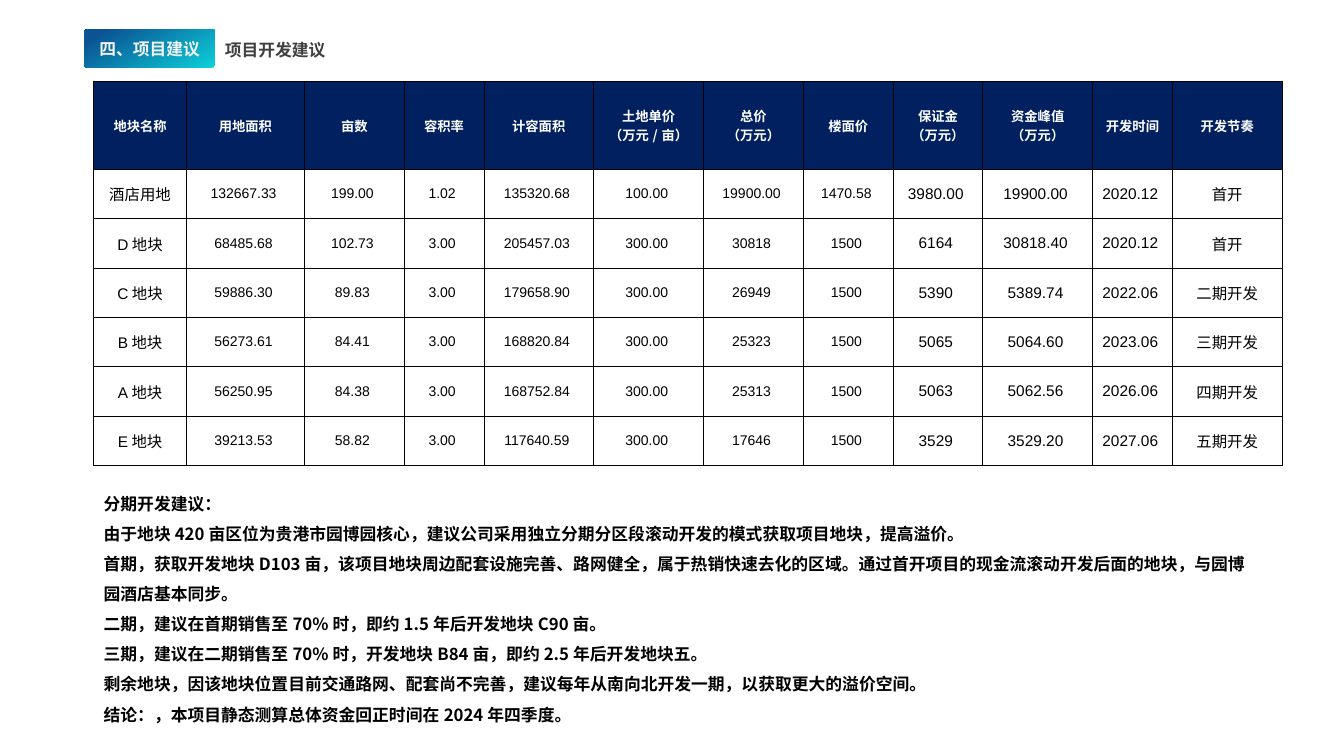
"""Build the project development proposal slide."""
import pptx
import pptx.dml.color
import pptx.enum.shapes
import pptx.enum.text
import pptx.oxml
import pptx.oxml.ns
import pptx.util
from pptx.util import Inches, Pt

RGBColor = pptx.dml.color.RGBColor
PP_ALIGN = pptx.enum.text.PP_ALIGN
MSO_ANCHOR = pptx.enum.text.MSO_ANCHOR

BLACK = RGBColor(0, 0, 0)
WHITE = RGBColor(255, 255, 255)
NAVY = RGBColor(0x00, 0x20, 0x60)
TEAL = RGBColor(0x0B, 0xD0, 0xD9)
BLUE = RGBColor(0x0B, 0x53, 0x94)
PALE = RGBColor(0xF2, 0xF2, 0xF2)
GREY = RGBColor(0x40, 0x40, 0x40)
CJK = "Noto Sans CJK SC"
LATIN = "Arial"
LINE = Pt(21.5)

SECTION = "四、项目建议"
TITLE = "项目开发建议"
HEADERS = ["地块名称", "用地面积", "亩数", "容积率", "计容面积", "土地单价\v（万元/亩）",
           "总价\n（万元）", "楼面价", "保证金\n（万元）", "资金峰值\n（万元）", "开发时间", "开发节奏"]
PLOTS = [
    ["酒店用地", "132667.33", "199.00", "1.02", "135320.68", "100.00",
     "19900.00", "1470.58", "3980.00", "19900.00", "2020.12", "首开"],
    ["D地块", "68485.68", "102.73", "3.00", "205457.03", "300.00",
     "30818", "1500", "6164", "30818.40", "2020.12", "首开"],
    ["C地块", "59886.30", "89.83", "3.00", "179658.90", "300.00",
     "26949", "1500", "5390", "5389.74", "2022.06", "二期开发"],
    ["B地块", "56273.61", "84.41", "3.00", "168820.84", "300.00",
     "25323", "1500", "5065", "5064.60", "2023.06", "三期开发"],
    ["A地块", "56250.95", "84.38", "3.00", "168752.84", "300.00",
     "25313", "1500", "5063", "5062.56", "2026.06", "四期开发"],
    ["E地块", "39213.53", "58.82", "3.00", "117640.59", "300.00",
     "17646", "1500", "3529", "3529.20", "2027.06", "五期开发"],
]
COL_WIDTHS = [0.92, 1.17, 0.99, 0.79, 1.09, 1.09, 0.99, 0.89, 0.89, 1.09, 0.79, 1.09]
HEADER_HEIGHT, ROW_HEIGHT = 0.87, 0.49
SMALL_COLS = range(1, 8)
ADVICE = [
    "分期开发建议：",
    "由于地块420亩区位为贵港市园博园核心，建议公司采用独立分期分区段滚动开发的模式获取项目地块，提高溢价。",
    "首期，获取开发地块D103亩，该项目地块周边配套设施完善、路网健全，属于热销快速去化的区域。"
    "通过首开项目的现金流滚动开发后面的地块，与园博园酒店基本同步。",
    "二期，建议在首期销售至70%时，即约1.5年后开发地块C90亩。",
    "三期，建议在二期销售至70%时，开发地块B84亩，即约2.5年后开发地块五。",
    "剩余地块，因该地块位置目前交通路网、配套尚不完善，建议每年从南向北开发一期，以获取更大的溢价空间。",
    "结论：，本项目静态测算总体资金回正时间在2024年四季度。",
]


def style(tf, size, color, name=CJK, bold=True, align=PP_ALIGN.LEFT, spacing=None):
    """Format every paragraph of a text frame."""
    for p in tf.paragraphs:
        p.alignment = align
        if spacing:
            p.line_spacing = spacing
            p.space_before = Pt(0)
        p.font.size = Pt(size)
        p.font.bold = bold
        p.font.color.rgb = color
        p.font.name = name
        defaults = p._p.pPr.find(pptx.oxml.ns.qn("a:defRPr"))
        defaults.append(pptx.oxml.parse_xml(
            f'<a:ea {pptx.oxml.ns.nsdecls("a")} typeface="{CJK}"/>'))


def set_margins(target, inset):
    """Give a cell or text frame equal margins."""
    target.margin_left = target.margin_right = Inches(inset)
    target.margin_top = target.margin_bottom = Inches(inset)


def add_borders(cell):
    """Draw thin black lines round a cell."""
    for side in "LRTB":
        cell._tc.get_or_add_tcPr().append(pptx.oxml.parse_xml(
            f'<a:ln{side} {pptx.oxml.ns.nsdecls("a")} w="6350"><a:solidFill>'
            f'<a:srgbClr val="{BLACK}"/></a:solidFill></a:ln{side}>'))


def add_title(s):
    """Place the slide title."""
    title = s.shapes.title
    title.left, title.top = Inches(2.21), Inches(0.29)
    title.width, title.height = Inches(2.47), Inches(0.31)
    tf = title.text_frame
    tf.text = TITLE
    tf.word_wrap = True
    tf.auto_size = pptx.enum.text.MSO_AUTO_SIZE.NONE
    tf.vertical_anchor = MSO_ANCHOR.MIDDLE
    set_margins(tf, 0.02)
    style(tf, 12, GREY, spacing=LINE)


def add_badge(s):
    """Draw the section badge."""
    badge = s.shapes.add_shape(pptx.enum.shapes.MSO_SHAPE.ROUNDED_RECTANGLE,
                               Inches(0.84), Inches(0.29), Inches(1.29), Inches(0.38))
    badge.adjustments[0] = 0.05
    badge.shadow.inherit = False
    badge.line.fill.background()
    badge.fill.gradient()
    badge.fill.gradient_angle = 120
    for stop, position, color in zip(badge.fill.gradient_stops, (0, 0.89), (TEAL, BLUE)):
        stop.position = position
        stop.color.rgb = color
    tf = badge.text_frame
    tf.text = SECTION
    tf.vertical_anchor = MSO_ANCHOR.MIDDLE
    style(tf, 12, PALE, align=PP_ALIGN.CENTER)


def add_plots(s):
    """Add the table of plots."""
    height = HEADER_HEIGHT + ROW_HEIGHT * len(PLOTS)
    table = s.shapes.add_table(len(PLOTS) + 1, len(HEADERS), Inches(0.93), Inches(0.81),
                               Inches(sum(COL_WIDTHS)), Inches(height)).table
    table.first_row = table.horz_banding = False
    for column, width in zip(table.columns, COL_WIDTHS):
        column.width = Inches(width)
    for i, values in enumerate([HEADERS] + PLOTS):
        table.rows[i].height = Inches(ROW_HEIGHT if i else HEADER_HEIGHT)
        for j, value in enumerate(values):
            cell = table.cell(i, j)
            cell.text = f"{value} " if value[0].isdigit() else value
            cell.vertical_anchor = MSO_ANCHOR.MIDDLE
            set_margins(cell, 0)
            add_borders(cell)
            cell.fill.solid()
            cell.fill.fore_color.rgb = WHITE if i else NAVY
            if i:
                style(cell.text_frame, 10 if j in SMALL_COLS else 11, BLACK,
                      LATIN, False, PP_ALIGN.CENTER)
            else:
                style(cell.text_frame, 9.5, WHITE, align=PP_ALIGN.CENTER)


def add_advice(s):
    """Add the phased development advice."""
    tf = s.shapes.add_textbox(Inches(0.93), Inches(4.75),
                              Inches(11.63), Inches(2.52)).text_frame
    tf.word_wrap = True
    tf.text = "\n".join(ADVICE)
    style(tf, 12, BLACK, spacing=LINE)


def main():
    """Build and save the slide."""
    prs = pptx.Presentation()
    prs.slide_width, prs.slide_height = Inches(13.33), Inches(7.5)
    s = prs.slides.add_slide(prs.slide_layouts[5])
    add_title(s)
    add_advice(s)
    add_plots(s)
    add_badge(s)
    prs.save("out.pptx")


if __name__ == "__main__":
    main()
